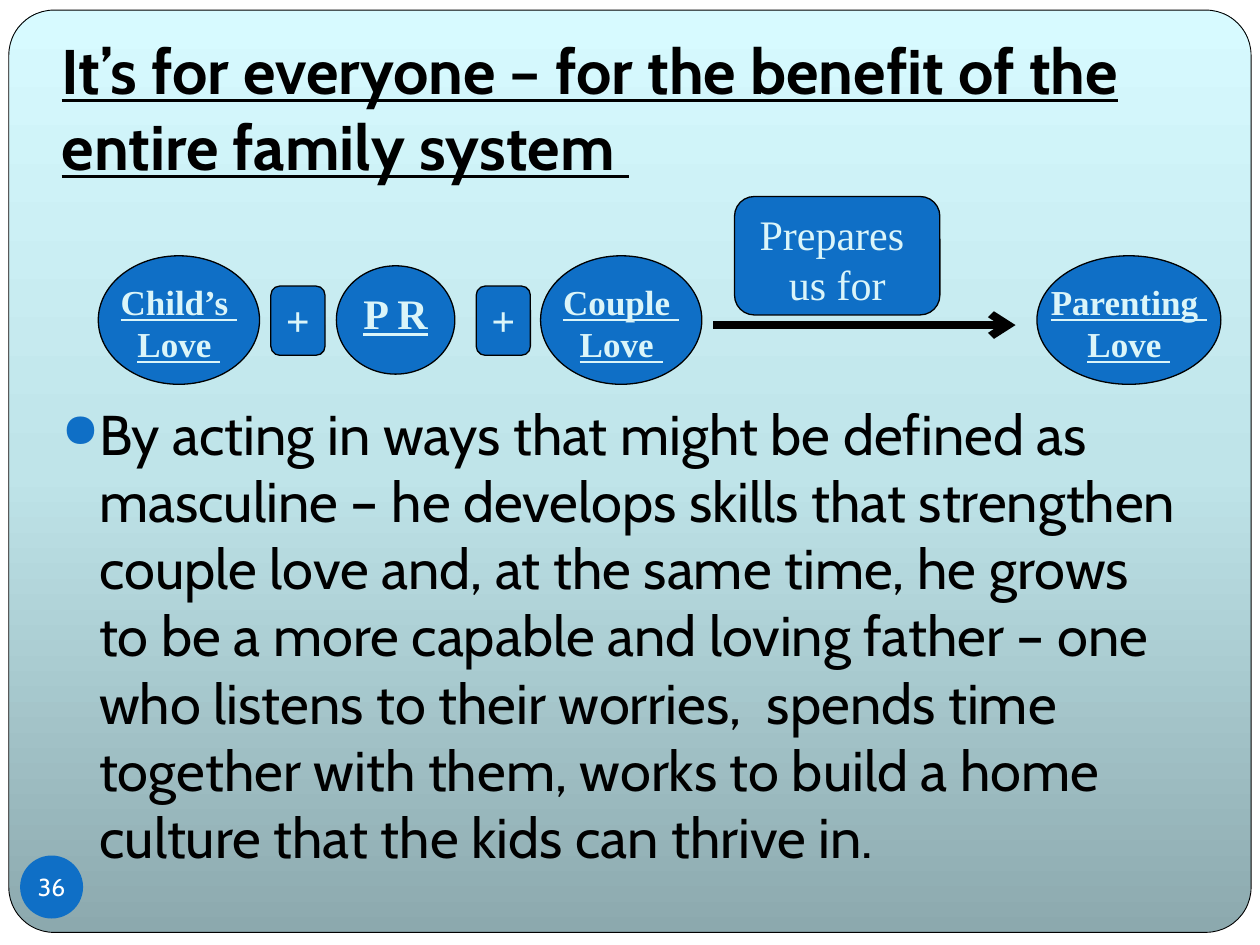
import copy

import pptx
import pptx.dml.color
import pptx.enum.shapes
import pptx.enum.text
import pptx.oxml
import pptx.oxml.ns
import pptx.util
from pptx.util import Inches

RGBColor = pptx.dml.color.RGBColor
Shape = pptx.enum.shapes.MSO_SHAPE
Anchor = pptx.enum.text.MSO_ANCHOR
Align = pptx.enum.text.PP_ALIGN
Pt = pptx.util.Pt
qn = pptx.oxml.ns.qn

BLACK = RGBColor(0x00, 0x00, 0x00)
WHITE = RGBColor(0xFF, 0xFF, 0xFF)
BLUE = RGBColor(0x0F, 0x6F, 0xC6)
PALE = RGBColor(0xDB, 0xF5, 0xF9)
CARD_STOPS = [
    (0, RGBColor(0x8C, 0xA9, 0xAE)),
    (0.5, RGBColor(0xBF, 0xE4, 0xE9)),
    (1, RGBColor(0xD7, 0xFA, 0xFF)),
]

HEADING_FONT = "Cabin"
DIAGRAM_FONT = "Times New Roman"
ROW_CENTER = 2.54


def set_font(paragraph, name, size, color, bold=False, underline=False):
    font = paragraph.font
    font.name = name
    font.size = Pt(size)
    font.color.rgb = color
    font.bold = bold
    font.underline = underline


def add_xml(parent, tag, **attributes):
    child = parent.makeelement(qn(tag), attributes)
    parent.append(child)
    return child


def add_card(slide):
    """Rounded panel that fades from pale at the top to dark at the bottom."""
    card = slide.shapes.add_shape(
        Shape.ROUNDED_RECTANGLE, Inches(0.07), Inches(0.08), Inches(9.86), Inches(7.32))
    card.adjustments[0] = 0.049
    card.shadow.inherit = False
    card.line.color.rgb = BLACK
    card.line.width = Pt(0.5)
    card.fill.gradient()
    card.fill.gradient_angle = 90
    stop_list = next(card._element.spPr.iter(qn("a:gsLst")))
    stop_list.append(copy.deepcopy(stop_list[0]))
    for stop, (position, color) in zip(card.fill.gradient_stops, CARD_STOPS):
        stop.position = position
        stop.color.rgb = color


def add_text(slide, left, top, width, height, text):
    """Wrapped text box; returns its frame and its only paragraph."""
    box = slide.shapes.add_textbox(
        Inches(left), Inches(top), Inches(width), Inches(height))
    frame = box.text_frame
    frame.word_wrap = True
    frame.text = text
    return frame, frame.paragraphs[0]


def add_title(slide, text):
    frame, paragraph = add_text(slide, 0.39, 0.3, 9.11, 1.25, text)
    frame.vertical_anchor = Anchor.BOTTOM
    frame.margin_bottom = Inches(0.1)
    set_font(paragraph, HEADING_FONT, 36, BLACK, bold=True, underline=True)


def add_bullet(slide, text):
    _, paragraph = add_text(slide, 0.39, 3.12, 9.14, 3.46, text)
    set_font(paragraph, HEADING_FONT, 32, BLACK)
    paragraph.space_before = Pt(5.8)
    properties = paragraph._p.get_or_add_pPr()
    properties.set("marL", str(Inches(0.3)))
    properties.set("indent", str(-Inches(0.3)))
    bullet_color = pptx.oxml.parse_xml(
        f'<a:buClr {pptx.oxml.ns.nsdecls("a")}><a:srgbClr val="{BLUE}"/></a:buClr>')
    default_font = properties.find(qn("a:defRPr"))
    if default_font is not None:
        properties.remove(default_font)
    properties.append(bullet_color)
    add_xml(properties, "a:buSzPct", val="85000")
    add_xml(properties, "a:buChar", char="●")
    if default_font is not None:
        properties.append(default_font)


def add_label(slide, kind, left, top, width, height, lines, size,
              name=DIAGRAM_FONT, color=PALE, bold=False, underline=False):
    """Blue shape with centred lines of text."""
    label = slide.shapes.add_shape(
        kind, Inches(left), Inches(top), Inches(width), Inches(height))
    label.shadow.inherit = False
    label.fill.solid()
    label.fill.fore_color.rgb = BLUE
    label.line.color.rgb = BLACK
    label.line.width = Pt(0.75)
    frame = label.text_frame
    frame.word_wrap = False
    frame.vertical_anchor = Anchor.TOP
    frame.text = "\n".join(lines)
    for paragraph in frame.paragraphs:
        paragraph.alignment = Align.CENTER
        set_font(paragraph, name, size, color, bold, underline)
    return label


def add_love(slide, left, width, height, lines, size):
    add_label(slide, Shape.OVAL, left, ROW_CENTER - height / 2, width, height,
              lines, size, bold=True, underline=True)


def add_plus(slide, left):
    add_label(slide, Shape.ROUNDED_RECTANGLE, left, 2.27, 0.43, 0.55, ["+"], 24, bold=True)


def add_arrow(slide, start, end, y):
    arrow = slide.shapes.add_connector(
        pptx.enum.shapes.MSO_CONNECTOR.STRAIGHT,
        Inches(start), Inches(y), Inches(end), Inches(y))
    arrow.line.color.rgb = BLACK
    arrow.line.width = Pt(4.5)
    add_xml(arrow.line._get_or_add_ln(), "a:tailEnd", type="arrow")
    add_xml(arrow._element.spPr, "a:effectLst")


def add_page_number(slide, number):
    badge = add_label(slide, Shape.OVAL, 0.16, 6.79, 0.5, 0.5, [number], 14,
                      name=HEADING_FONT, color=WHITE)
    badge.line.fill.background()
    frame = badge.text_frame
    frame.vertical_anchor = Anchor.MIDDLE
    frame.margin_left = frame.margin_right = 0
    frame.margin_top = frame.margin_bottom = 0


def main():
    deck = pptx.Presentation()
    deck.slide_width = Inches(10)
    deck.slide_height = Inches(7.5)
    slide = deck.slides.add_slide(deck.slide_layouts[6])
    slide.background.fill.solid()
    slide.background.fill.fore_color.rgb = WHITE

    add_card(slide)
    add_title(slide, "It’s for everyone – for the benefit of the entire family system ")
    add_bullet(
        slide,
        "By acting in ways that might be defined as masculine – he develops skills "
        "that strengthen couple love and, at the same time, he grows to be a more "
        "capable and loving father – one who listens to their worries,  spends time "
        "together with them, works to build a home culture that the kids can thrive in.")
    add_page_number(slide, "36")

    add_love(slide, 0.78, 1.28, 1.02, ["Child’s ", "Love "], 20)
    add_plus(slide, 2.15)
    add_love(slide, 2.67, 0.94, 0.86, ["P R"], 24)
    add_plus(slide, 3.78)
    add_love(slide, 4.29, 1.28, 1.02, ["Couple ", "Love "], 20)
    add_arrow(slide, 5.66, 8.06, 2.58)
    add_label(slide, Shape.ROUNDED_RECTANGLE, 5.83, 1.56, 1.63, 0.94,
              ["Prepares ", "us for"], 24)
    add_love(slide, 8.23, 1.46, 1.02, ["Parenting ", "Love "], 20)

    deck.save("out.pptx")


if __name__ == "__main__":
    main()
